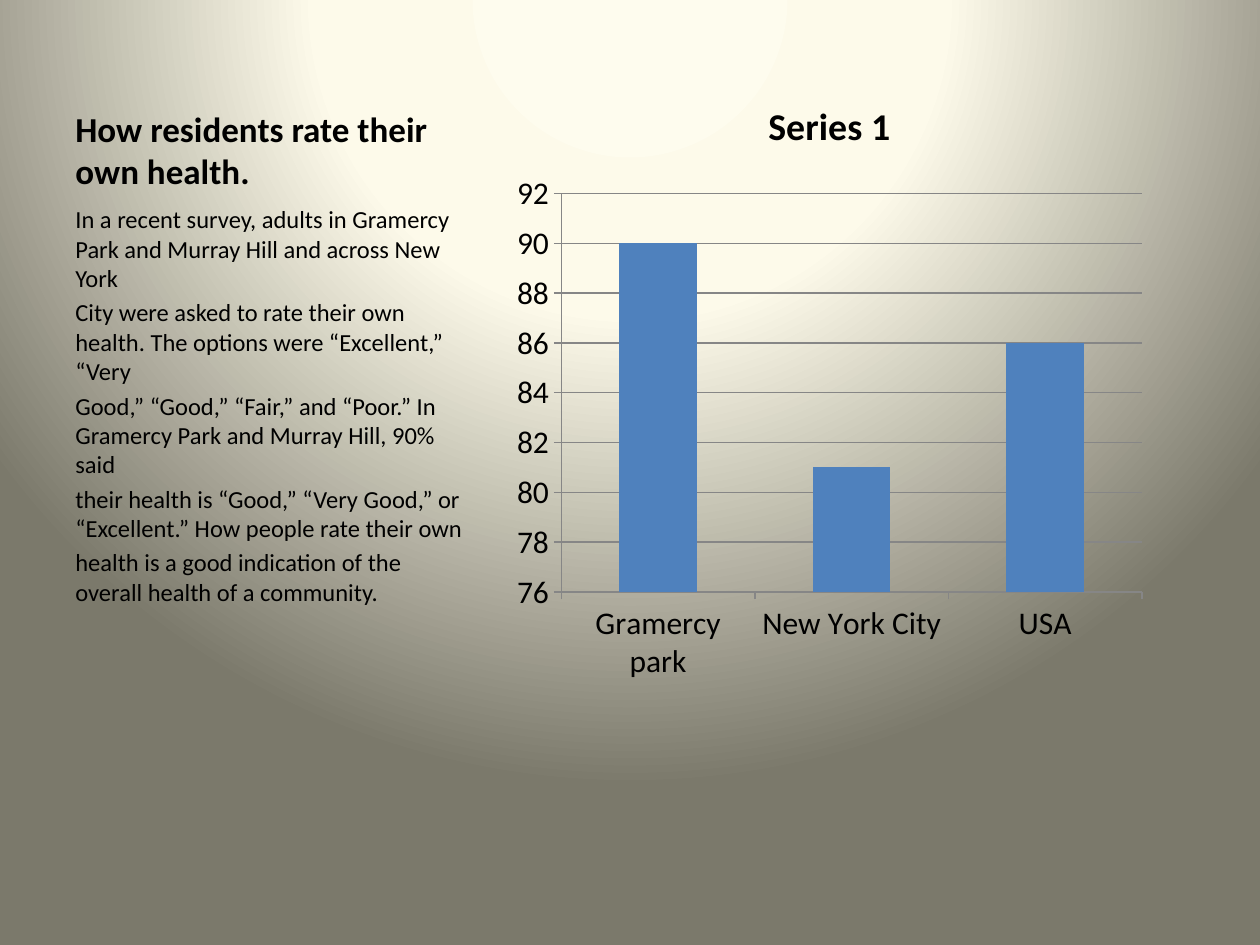
"""Build a slide with a health survey text beside a column chart."""
from pptx import Presentation
from pptx.chart.data import CategoryChartData
from pptx.dml.color import RGBColor
from pptx.enum.chart import XL_CHART_TYPE, XL_TICK_MARK
from pptx.enum.text import MSO_ANCHOR
from pptx.oxml import parse_xml
from pptx.util import Emu, Pt

COLUMNS = XL_CHART_TYPE.COLUMN_CLUSTERED
TICK_OUTSIDE = XL_TICK_MARK.OUTSIDE
TOP, BOTTOM = MSO_ANCHOR.TOP, MSO_ANCHOR.BOTTOM

FONT = "Calibri"
BLACK = RGBColor(0x00, 0x00, 0x00)
BLUE = RGBColor(0x4F, 0x81, 0xBD)
GRAY = RGBColor(0x86, 0x86, 0x86)
GLOW_STOPS = (
    (0, RGBColor(0xFE, 0xFC, 0xEE)),
    (40, RGBColor(0xFD, 0xFA, 0xEA)),
    (100, RGBColor(0x7B, 0x79, 0x6B)),
)
DRAWING_NS = "http://schemas.openxmlformats.org/drawingml/2006/main"

TITLE = "How residents rate their own health."
SURVEY = (
    "In a recent survey, adults in Gramercy Park and Murray Hill and across New York",
    "City were asked to rate their own health. The options were “Excellent,” “Very",
    "Good,” “Good,” “Fair,” and “Poor.” In Gramercy Park and Murray Hill, 90% said",
    "their health is “Good,” “Very Good,” or “Excellent.” How people rate their own",
    "health is a good indication of the overall health of a community.",
)
RATINGS = {"Gramercy park": 90, "New York City": 81, "USA": 86}


def px(length):
    """Turn pixels into EMU."""
    return Emu(round(length * 914400 / 126))


def style_font(font, size, bold=False):
    """Apply the common typeface and colour at the given size."""
    font.name = FONT
    font.size = Pt(size)
    font.bold = bold
    font.color.rgb = BLACK


def set_background(slide):
    """Fill the background with a circular glow from above the slide."""
    fill = slide.background.fill
    fill.gradient()
    stops = "".join(
        f'<a:gs pos="{position * 1000}"><a:srgbClr val="{color}"/></a:gs>'
        for position, color in GLOW_STOPS
    )
    glow = parse_xml(
        f'<a:gradFill xmlns:a="{DRAWING_NS}" rotWithShape="1">'
        f'<a:gsLst>{stops}</a:gsLst><a:path path="circle">'
        '<a:fillToRect l="50000" t="-80000" r="50000" b="180000"/>'
        '</a:path></a:gradFill>'
    )
    gradient = slide.element.xpath("p:cSld/p:bg/p:bgPr/a:gradFill")[0]
    gradient.getparent().replace(gradient, glow)


def add_text(slide, paragraphs, box, size, bold=False, anchor=TOP, gap=0):
    """Add a wrapped text box with evenly spaced paragraphs."""
    frame = slide.shapes.add_textbox(*map(px, box)).text_frame
    frame.word_wrap = True
    frame.vertical_anchor = anchor
    for index, text in enumerate(paragraphs):
        paragraph = frame.add_paragraph() if index else frame.paragraphs[0]
        if index:
            paragraph.space_before = Pt(gap)
        run = paragraph.add_run()
        run.text = text
        style_font(run.font, size, bold)


def add_ratings_chart(slide, box):
    """Add the column chart of health ratings."""
    data = CategoryChartData()
    data.categories = list(RATINGS)
    data.add_series("Series 1", list(RATINGS.values()))
    chart = slide.shapes.add_chart(COLUMNS, *map(px, box), data).chart
    style_font(chart.font, 18)
    chart.has_legend = False
    chart.has_title = True
    chart.chart_title.include_in_layout = False
    title = chart.chart_title.text_frame
    title.text = "Series 1"
    style_font(title.paragraphs[0].runs[0].font, 21.6, bold=True)

    plot = chart.plots[0]
    plot.gap_width = 150
    plot.vary_by_categories = False
    fill = plot.series[0].format.fill
    fill.solid()
    fill.fore_color.rgb = BLUE

    values = chart.value_axis
    values.minimum_scale, values.maximum_scale, values.major_unit = 76, 92, 2
    values.has_major_gridlines = True
    for axis in (values, chart.category_axis):
        axis.major_tick_mark = TICK_OUTSIDE
    for element in (values, chart.category_axis, values.major_gridlines):
        element.format.line.color.rgb = GRAY
        element.format.line.width = Pt(0.75)


def main():
    """Build and save the slide."""
    presentation = Presentation()
    presentation.slide_width, presentation.slide_height = px(1260), px(945)
    slide = presentation.slides.add_slide(presentation.slide_layouts[6])
    set_background(slide)
    add_text(slide, [TITLE], (63, 38, 415, 160), 20, bold=True, anchor=BOTTOM)
    add_ratings_chart(slide, (504, 73, 651, 620))
    add_text(slide, SURVEY, (63, 198, 415, 646), 14, gap=2.8)
    presentation.save("out.pptx")


if __name__ == "__main__":
    main()
